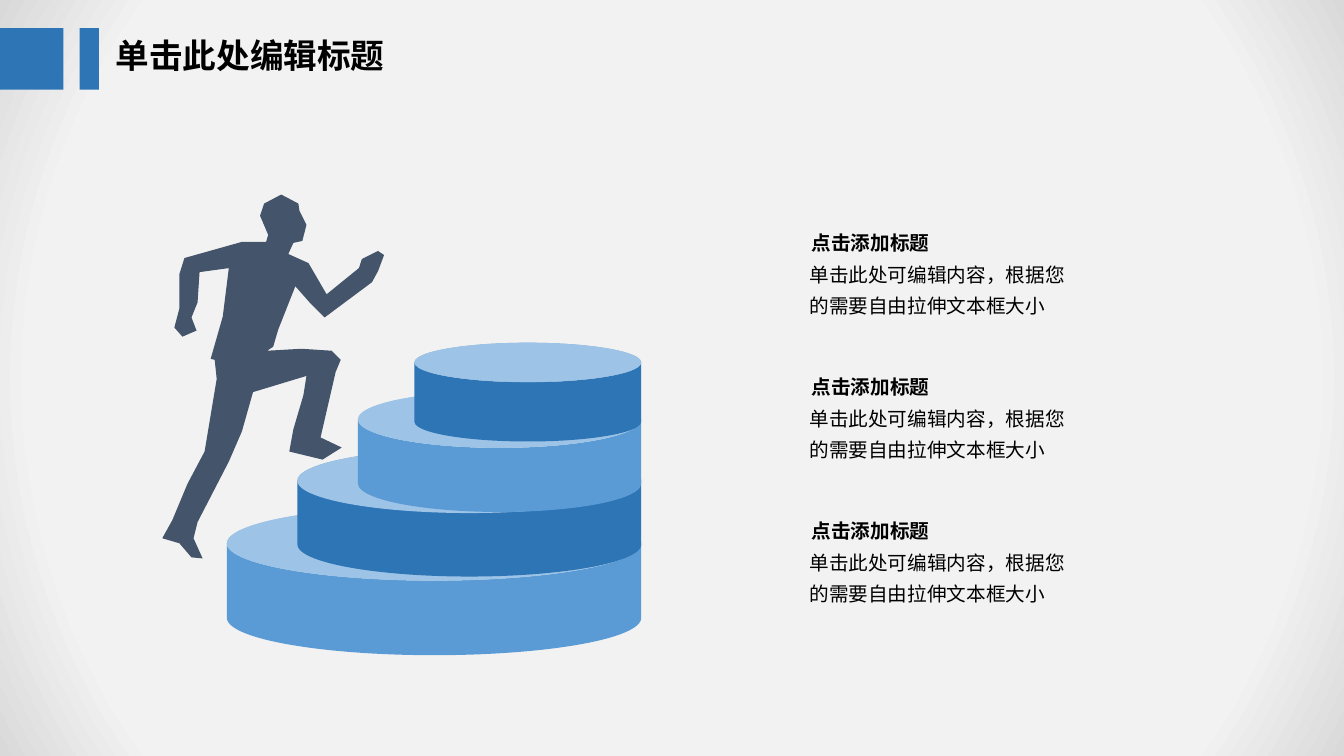
from typing import NamedTuple

from lxml.etree import SubElement
from pptx import Presentation
from pptx.dml.color import RGBColor
from pptx.enum.shapes import MSO_SHAPE
from pptx.enum.text import MSO_ANCHOR, MSO_AUTO_SIZE
from pptx.oxml.ns import qn
from pptx.shapes.autoshape import Shape
from pptx.slide import Slide
from pptx.util import Pt

PX = 9144
BLUE = RGBColor(0x2E, 0x75, 0xB6)
MID_BLUE = RGBColor(0x5B, 0x9B, 0xD5)
PALE_BLUE = RGBColor(0x9D, 0xC3, 0xE6)
SLATE = RGBColor(0x44, 0x54, 0x6A)
BLACK = RGBColor(0, 0, 0)
BACKDROP = RGBColor(0xF2, 0xF2, 0xF2)
BACKDROP_EDGE = RGBColor(0xD9, 0xD9, 0xD9)
CJK_FONT = "Noto Sans CJK SC"
LATIN_FONT = "Calibri"
STEPS_RIGHT = 636


class Area(NamedTuple):
    """A rectangle in px."""
    left: int
    top: int
    width: int
    height: int

    def emu(self) -> list[int]:
        """Give the four lengths in EMU."""
        return [length * PX for length in self]


class Step(NamedTuple):
    """One round step that ends at the shared right edge."""
    left: int
    top: int
    height: int
    bend: float
    color: RGBColor


class Style(NamedTuple):
    """The look of a text."""
    font: str
    size: int
    bold: bool
    line_spacing: float
    space_before: float = 0
    grows: bool = True


TITLE = Style(CJK_FONT, 24, True, 0.9, grows=False)
HEADING = Style(CJK_FONT, 14, True, 1.3)
BODY = Style(LATIN_FONT, 14, False, 1.3, 2.8)

STEPS = [
    Step(225, 502, 148, 0.5, MID_BLUE),
    Step(295, 445, 127, 0.5, BLUE),
    Step(355, 388, 120, 0.47, MID_BLUE),
    Step(411, 340, 98, 0.4, BLUE),
]
TITLE_BARS = [Area(0, 28, 63, 61), Area(79, 28, 19, 61)]
NOTE_TOPS = [217 + 143 * row for row in range(3)]

RUNNER = [
    (375, 249), (359, 257), (356, 266), (324, 292), (306, 261), (286, 252),
    (291, 241), (300, 239), (304, 223), (297, 209), (296, 202), (279, 193),
    (262, 202), (258, 214), (266, 233), (264, 240), (240, 240), (183, 256),
    (178, 272), (178, 306), (173, 325), (181, 334), (195, 328), (190, 315),
    (196, 300), (198, 270), (227, 266), (221, 314), (209, 356), (213, 357),
    (215, 376), (203, 448), (186, 480), (171, 516), (161, 534), (178, 539),
    (190, 553), (201, 554), (192, 534), (196, 518), (227, 458), (240, 428),
    (251, 389), (304, 373), (301, 392), (291, 426), (287, 448), (320, 456),
    (339, 444), (318, 434), (333, 369), (338, 357), (329, 348), (299, 346),
    (265, 348), (271, 344), (276, 327), (293, 284), (308, 301), (322, 315),
    (369, 280), (375, 269), (381, 253),
]


def paint(shape: Shape, color: RGBColor) -> None:
    """Give a shape a flat fill without line or shadow."""
    shape.shadow.inherit = False
    shape.fill.solid()
    shape.fill.fore_color.rgb = color
    shape.line.fill.background()


def add_preset(page: Slide, kind: MSO_SHAPE, area: Area, color: RGBColor) -> Shape:
    """Draw a flat preset shape."""
    shape = page.shapes.add_shape(kind, *area.emu())
    paint(shape, color)
    return shape


def add_step(page: Slide, step: Step) -> None:
    """Draw a drum and the lid that covers its top."""
    area = Area(step.left, step.top, STEPS_RIGHT - step.left, step.height)
    drum = add_preset(page, MSO_SHAPE.CAN, area, step.color)
    drum.adjustments[0] = step.bend
    lid = area._replace(height=round(step.bend * step.height))
    add_preset(page, MSO_SHAPE.OVAL, lid, PALE_BLUE)


def add_runner(page: Slide) -> None:
    """Draw the running figure."""
    builder = page.shapes.build_freeform(*RUNNER[0], scale=PX)
    builder.add_line_segments(RUNNER[1:], close=True)
    paint(builder.convert_to_shape(), SLATE)


def add_text(page: Slide, area: Area, text: str, style: Style) -> None:
    """Place one styled paragraph in a text box."""
    box = page.shapes.add_textbox(*area.emu())
    frame = box.text_frame
    frame.word_wrap = True
    if style.grows:
        frame.auto_size = MSO_AUTO_SIZE.SHAPE_TO_FIT_TEXT
    else:
        frame.vertical_anchor = MSO_ANCHOR.MIDDLE
    para = frame.paragraphs[0]
    para.line_spacing = style.line_spacing
    para.space_before = Pt(style.space_before)
    span = para.add_run()
    span.text = text
    span.font.name = style.font
    span.font.size = Pt(style.size)
    span.font.bold = style.bold
    span.font.color.rgb = BLACK
    SubElement(span.font._element, qn("a:ea"), typeface=CJK_FONT)


def set_backdrop(page: Slide) -> None:
    """Shade the page from its centre to its corners."""
    fill = page.background.fill
    fill.gradient()
    stops = zip(fill.gradient_stops, [(0.83, BACKDROP), (1, BACKDROP_EDGE)])
    for stop, (position, color) in stops:
        stop.position = position
        stop.color.rgb = color
    gradient = next(page.element.iter(qn("a:gradFill")))
    gradient.remove(gradient.find(qn("a:lin")))
    circle = SubElement(gradient, qn("a:path"), {"path": "circle"})
    SubElement(circle, qn("a:fillToRect"), dict.fromkeys("ltrb", "50000"))


def main() -> None:
    """Build and save the slide."""
    deck = Presentation()
    deck.slide_width, deck.slide_height = 1333 * PX, 750 * PX
    page = deck.slides.add_slide(deck.slide_layouts[6])
    set_backdrop(page)
    add_runner(page)
    for step in STEPS:
        add_step(page, step)
    for top in NOTE_TOPS:
        add_text(page, Area(795, top, 153, 41), "点击添加标题", HEADING)
        add_text(page, Area(793, top + 32, 283, 71),
                 "单击此处可编辑内容，根据您的需要自由拉伸文本框大小", BODY)
    for bar in TITLE_BARS:
        add_preset(page, MSO_SHAPE.RECTANGLE, bar, BLUE)
    add_text(page, Area(105, 36, 297, 43), "单击此处编辑标题", TITLE)
    deck.save("out.pptx")


if __name__ == "__main__":
    main()
